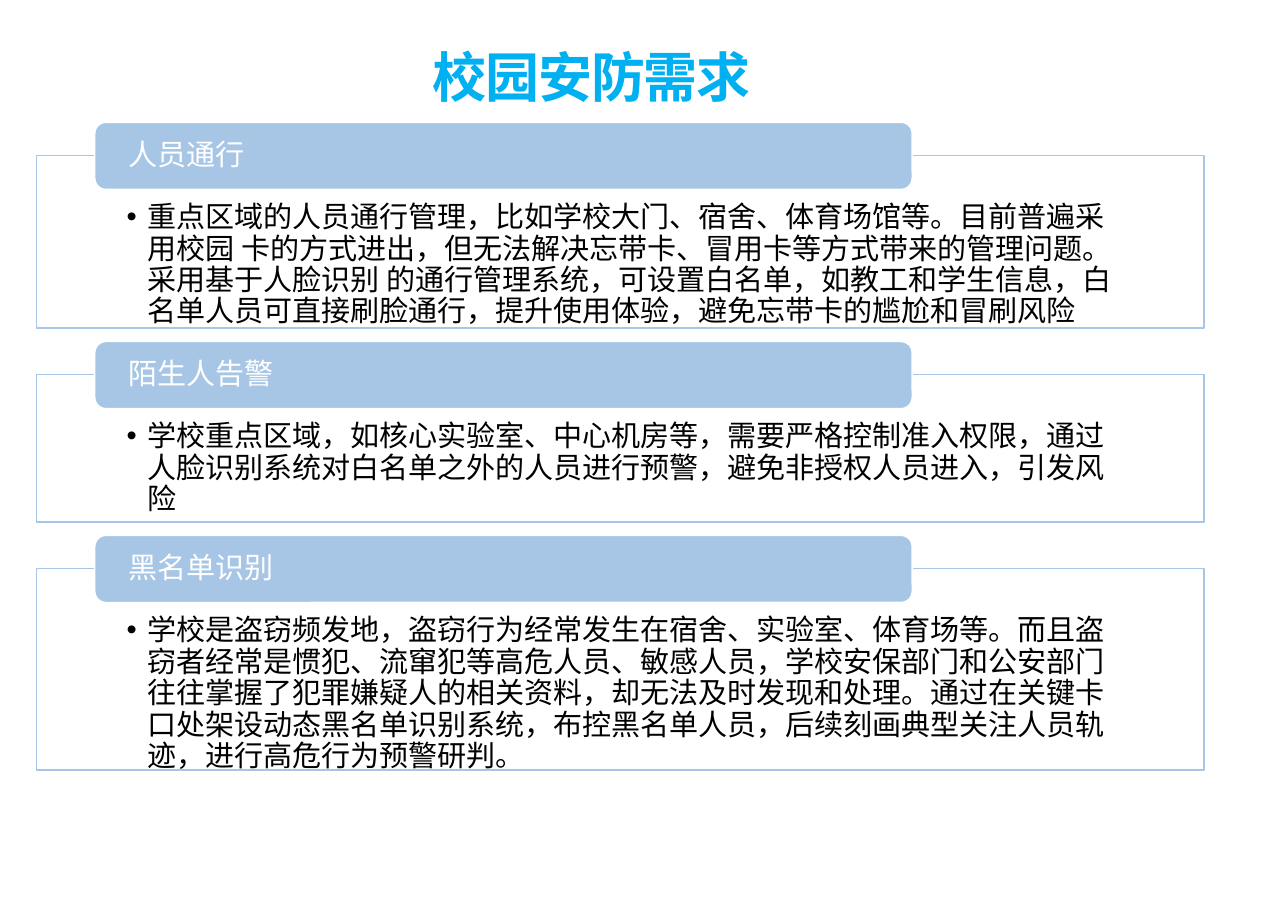
from lxml import etree
from pptx import Presentation
from pptx.dml.color import RGBColor
from pptx.enum.shapes import MSO_SHAPE
from pptx.enum.text import MSO_ANCHOR, PP_ALIGN
from pptx.oxml.ns import qn
from pptx.util import Inches, Pt

RECTANGLE, ROUNDED = MSO_SHAPE.RECTANGLE, MSO_SHAPE.ROUNDED_RECTANGLE
TOP, MIDDLE = MSO_ANCHOR.TOP, MSO_ANCHOR.MIDDLE
LEFT = PP_ALIGN.LEFT

SKY = RGBColor(0x00, 0xB0, 0xF0)
PALE_BLUE = RGBColor(0xA7, 0xC6, 0xE5)
WHITE = RGBColor(0xFF, 0xFF, 0xFF)
BLACK = RGBColor(0x00, 0x00, 0x00)
CJK_FONT = "Noto Sans CJK SC"

HEADER_HEIGHT = 0.61
HEADER_RISE = 0.3  # how far a header stands above its panel
SECTION_GAP = 0.12

# Heading, panel height, description
SECTIONS = [
    ("人员通行", 1.57,
     "重点区域的人员通行管理，比如学校大门、宿舍、体育场馆等。目前普遍采用校园 卡的方式进出，"
     "但无法解决忘带卡、冒用卡等方式带来的管理问题。采用基于人脸识别 的通行管理系统，"
     "可设置白名单，如教工和学生信息，白名单人员可直接刷脸通行，提升使用体验，"
     "避免忘带卡的尴尬和冒刷风险"),
    ("陌生人告警", 1.34,
     "学校重点区域，如核心实验室、中心机房等，需要严格控制准入权限，"
     "通过人脸识别系统对白名单之外的人员进行预警，避免非授权人员进入，引发风险"),
    ("黑名单识别", 1.83,
     "学校是盗窃频发地，盗窃行为经常发生在宿舍、实验室、体育场等。"
     "而且盗窃者经常是惯犯、流窜犯等高危人员、敏感人员，"
     "学校安保部门和公安部门往往掌握了犯罪嫌疑人的相关资料，却无法及时发现和处理。"
     "通过在关键卡口处架设动态黑名单识别系统，布控黑名单人员，"
     "后续刻画典型关注人员轨迹，进行高危行为预警研判。"),
]


def write(shape, text, color, size=19, font="Arial", bold=False, anchor=MIDDLE,
          margins=(0.28, 0, 0.28, 0), line_spacing=0.9, tracking=None, bullet=False):
    frame = shape.text_frame
    frame.word_wrap = True
    frame.vertical_anchor = anchor
    (frame.margin_left, frame.margin_top,
     frame.margin_right, frame.margin_bottom) = [Inches(m) for m in margins]
    paragraph = frame.paragraphs[0]
    paragraph.alignment = LEFT
    paragraph.line_spacing = line_spacing
    if bullet:
        properties = paragraph._p.get_or_add_pPr()
        properties.set("marL", str(Inches(0.19)))
        properties.set("indent", str(Inches(-0.19)))
        etree.SubElement(properties, qn("a:buFont"), typeface="Arial")
        etree.SubElement(properties, qn("a:buChar"), char="•")
    run = paragraph.add_run()
    run.text = text
    run.font.size = Pt(size)
    run.font.bold = bold
    run.font.color.rgb = color
    run.font.name = font
    run_properties = run._r.get_or_add_rPr()
    etree.SubElement(run_properties, qn("a:ea"), typeface=CJK_FONT)
    if tracking is not None:
        run_properties.set("spc", str(int(tracking * 100)))


def add_box(preset, left, top, width, height, fill, line):
    box = slide.shapes.add_shape(preset, Inches(left), Inches(top),
                                 Inches(width), Inches(height))
    box.shadow.inherit = False
    box.fill.solid()
    box.fill.fore_color.rgb = fill
    box.line.color.rgb = line
    box.line.width = Pt(1)
    return box


prs = Presentation()
prs.slide_width, prs.slide_height = Inches(11.69), Inches(8.27)
slide = prs.slides.add_slide(prs.slide_layouts[6])

# Title
title = slide.shapes.add_textbox(Inches(3.82), Inches(0.41), Inches(7.5), Inches(0.55))
write(title, "校园安防需求", SKY, size=35.3, font=CJK_FONT, bold=True,
      margins=(0.11, 0.06, 0.11, 0.06), line_spacing=1.0, tracking=-0.8)

# Sections: a bordered panel with a header across its top edge
header_top = 1.11
for heading, panel_height, description in SECTIONS:
    panel_top = header_top + HEADER_RISE
    panel = add_box(RECTANGLE, 0.33, panel_top, 10.6, panel_height, WHITE, PALE_BLUE)
    panel_color = panel.fill._xPr.find(qn("a:solidFill"))[0]
    etree.SubElement(panel_color, qn("a:alpha"), val="90000")
    write(panel, description, BLACK, anchor=TOP,
          margins=(0.82, 0.43, 0.82, 0.15), bullet=True)

    header = add_box(ROUNDED, 0.86, header_top, 7.42, HEADER_HEIGHT, PALE_BLUE, WHITE)
    write(header, heading, WHITE)
    header_top = panel_top + panel_height + SECTION_GAP

prs.save("out.pptx")
